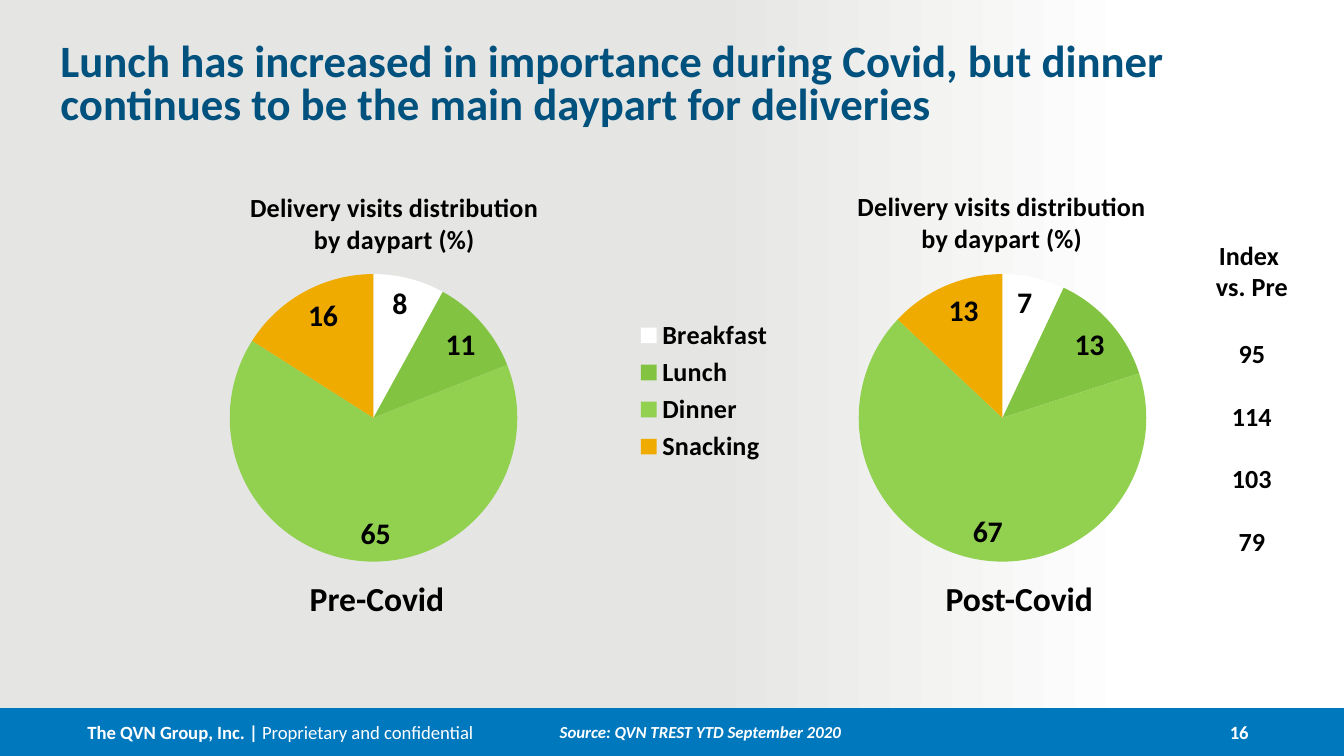
from copy import deepcopy

from lxml.etree import Element, SubElement
from pptx import Presentation
from pptx.chart.data import CategoryChartData
from pptx.dml.color import RGBColor
from pptx.enum.chart import XL_CHART_TYPE as ChartType
from pptx.enum.chart import XL_LABEL_POSITION as LabelPosition
from pptx.enum.chart import XL_LEGEND_POSITION as LegendPosition
from pptx.enum.shapes import MSO_SHAPE as Shape
from pptx.enum.text import MSO_ANCHOR as Anchor
from pptx.enum.text import PP_ALIGN as Align
from pptx.oxml.ns import qn
from pptx.util import Inches, Pt

WHITE, BLACK, BLUE, NAVY, GREY = "FFFFFF", "000000", "0078BE", "00517D", "E5E5E3"
SLICE_COLORS = [WHITE, "82C341", "92D050", "F0AB00"]
DAYPARTS = ["Breakfast", "Lunch", "Dinner", "Snacking"]
CHART_TITLE = "Delivery visits distribution\nby daypart (%)"


def color(value):
    return RGBColor.from_string(value)


def set_layout(element, index, inner=False, **fractions):
    """Put a manual chart layout into an element at the given child index."""
    for old in element.findall(qn("c:layout")):
        element.remove(old)
    layout = Element(qn("c:layout"))
    manual = SubElement(layout, qn("c:manualLayout"))
    values = {"layoutTarget": "inner"} if inner else {}
    values.update(xMode="edge", yMode="edge")
    values.update((key, f"{value:.4f}") for key, value in fractions.items())
    for key, value in values.items():
        SubElement(manual, qn(f"c:{key}")).set("val", value)
    element.insert(index, layout)


class SlideBuilder:
    font_name = "Calibri"

    def __init__(self, slide):
        self.slide = slide

    def style(self, font, size, text_color=BLACK, bold=True, italic=False):
        values = {"name": self.font_name, "size": Pt(size), "bold": bold, "italic": italic}
        for key, value in values.items():
            setattr(font, key, value)
        font.color.rgb = color(text_color)

    def rectangle(self, box, fill=None, stops=None):
        shape = self.slide.shapes.add_shape(Shape.RECTANGLE, *map(Inches, box))
        shape.shadow.inherit = False
        shape.line.fill.background()
        if stops:
            shape.fill.gradient()
            shape.fill.gradient_angle = 180
            stop_list = shape._element.spPr.find(qn("a:gradFill")).find(qn("a:gsLst"))
            stop_list.append(deepcopy(stop_list[-1]))
            for stop, (position, value) in zip(shape.fill.gradient_stops, stops):
                stop.position = position
                stop.color.rgb = color(value)
        else:
            shape.fill.solid()
            shape.fill.fore_color.rgb = color(fill)

    def text(self, box, lines, size, text_color=BLACK, align=Align.CENTER,
             anchor=Anchor.TOP, insets=(0.1, 0.05, 0.1, 0.05), italic=False, **spacing):
        """Each line is a list of (text, bold) runs or a bold string; a newline is a break."""
        frame = self.slide.shapes.add_textbox(*map(Inches, box)).text_frame
        sides = ("margin_left", "margin_top", "margin_right", "margin_bottom")
        values = dict(zip(sides, map(Inches, insets)), word_wrap=True, vertical_anchor=anchor)
        for key, value in values.items():
            setattr(frame, key, value)
        for number, line in enumerate(lines):
            paragraph = frame.add_paragraph() if number else frame.paragraphs[0]
            paragraph.alignment = align
            if number and "space_before" in spacing:
                paragraph.space_before = spacing["space_before"]
            for key in ("line_spacing", "space_after"):
                if key in spacing:
                    setattr(paragraph, key, spacing[key])
            for content, bold in [(line, True)] if isinstance(line, str) else line:
                for part_number, part in enumerate(content.split("\n")):
                    if part_number:
                        paragraph.add_line_break()
                    run = paragraph.add_run()
                    run.text = part
                    self.style(run.font, size, text_color, bold, italic)

    def pie(self, box, categories, values, pie_left, title_at, legend_box=None):
        """Pie, title and legend places are slide inches."""
        left, top, width, height = box
        diameter, pie_top = 2.14, 2.04

        def fractions(x, y, w=None, h=None):
            result = {"x": (x - left) / width, "y": (y - top) / height}
            if w:
                result.update(w=w / width, h=h / height)
            return result

        data = CategoryChartData(number_format="0")
        data.categories = categories
        data.add_series("Series 1", values)
        chart = self.slide.shapes.add_chart(ChartType.PIE, *map(Inches, box), data).chart
        self.style(chart.font, 18, bold=False)
        plot = chart.plots[0]
        plot.vary_by_categories = True
        set_layout(chart._chartSpace.chart.plotArea, 0, inner=True,
                   **fractions(pie_left, pie_top, diameter, diameter))

        # Slices and labels
        for index, value in enumerate(SLICE_COLORS):
            point_format = plot.series[0].points[index].format
            point_format.fill.solid()
            point_format.fill.fore_color.rgb = color(value)
            point_format.line.fill.background()
        plot.has_data_labels = True
        labels = plot.data_labels
        settings = {"show_value": True, "show_percentage": False, "number_format": "0",
                    "number_format_is_linked": False, "position": LabelPosition.INSIDE_END}
        for key, value in settings.items():
            setattr(labels, key, value)
        self.style(labels.font, 16)

        # Title and legend
        chart.has_title = True
        title = chart.chart_title
        title.text_frame.text = CHART_TITLE
        for paragraph in title.text_frame.paragraphs:
            paragraph.alignment = Align.CENTER
            self.style(paragraph.font, 14)
            self.style(paragraph.runs[0].font, 14)
        set_layout(title._element, 1, **fractions(*title_at))
        chart.has_legend = legend_box is not None
        if legend_box:
            legend = chart.legend
            legend.position = LegendPosition.RIGHT
            legend.include_in_layout = False
            self.style(legend.font, 14)
            set_layout(legend._element, 1, **fractions(*legend_box))


def main():
    presentation = Presentation()
    presentation.slide_width = Inches(10)
    presentation.slide_height = Inches(10) * 9 // 16
    builder = SlideBuilder(presentation.slides.add_slide(presentation.slide_layouts[6]))

    # Background and footer band
    builder.rectangle((0, 5.27, 10, 0.36), BLUE)
    builder.rectangle((0, -0.02, 8.46, 5.29), stops=[(0, WHITE), (0.38, GREY), (1, "E6E6E5")])
    builder.text((0.65, 5.27, 4.11, 0.35),
                 [[("The QVN Group, Inc. | ", True), ("Proprietary and confidential", False)]],
                 10, WHITE, Align.LEFT, Anchor.MIDDLE, (0, 0, 0, 0))
    builder.text((8.79, 5.27, 0.65, 0.35), ["16"], 10, WHITE, Align.RIGHT, Anchor.MIDDLE,
                 (0, 0.05, 0.15, 0.05))

    # Headline
    builder.text((0.45, 0.32, 9.25, 0.5),
                 ["Lunch has increased in importance during Covid, but dinner "
                  "continues to be the main daypart for deliveries"],
                 24, NAVY, Align.LEFT, insets=(0, 0, 0, 0), line_spacing=0.8, space_after=Pt(2))

    # Pies and their captions
    builder.pie((-0.88, 1.16, 6.73, 3.49), DAYPARTS, [8, 11, 65, 16], 1.71, (1.83, 1.38),
                (4.7, 2.34, 1.08, 1.14))
    builder.pie((5.36, 1.16, 3.87, 3.49), ["1", "2", "3", "4"], [7, 13, 67, 13], 6.39,
                (6.35, 1.37))
    for left, caption in ((1.62, "Pre-Covid"), (6.4, "Post-Covid")):
        builder.text((left, 4.25, 2.37, 0.4), [caption], 18)

    # Index column
    builder.text((8.78, 1.73, 1.07, 0.57), ["Index \nvs. Pre"], 14)
    builder.text((8.78, 2.46, 1.07, 1.75), ["95", "114", "103", "79"], 14, space_before=Pt(16.8))

    # Source
    builder.text((3.41, 5.34, 3.6, 0.26), ["Source: QVN TREST YTD September 2020"], 9, WHITE,
                 italic=True, line_spacing=0.85, space_after=Pt(14.4))

    presentation.save("out.pptx")


if __name__ == "__main__":
    main()
